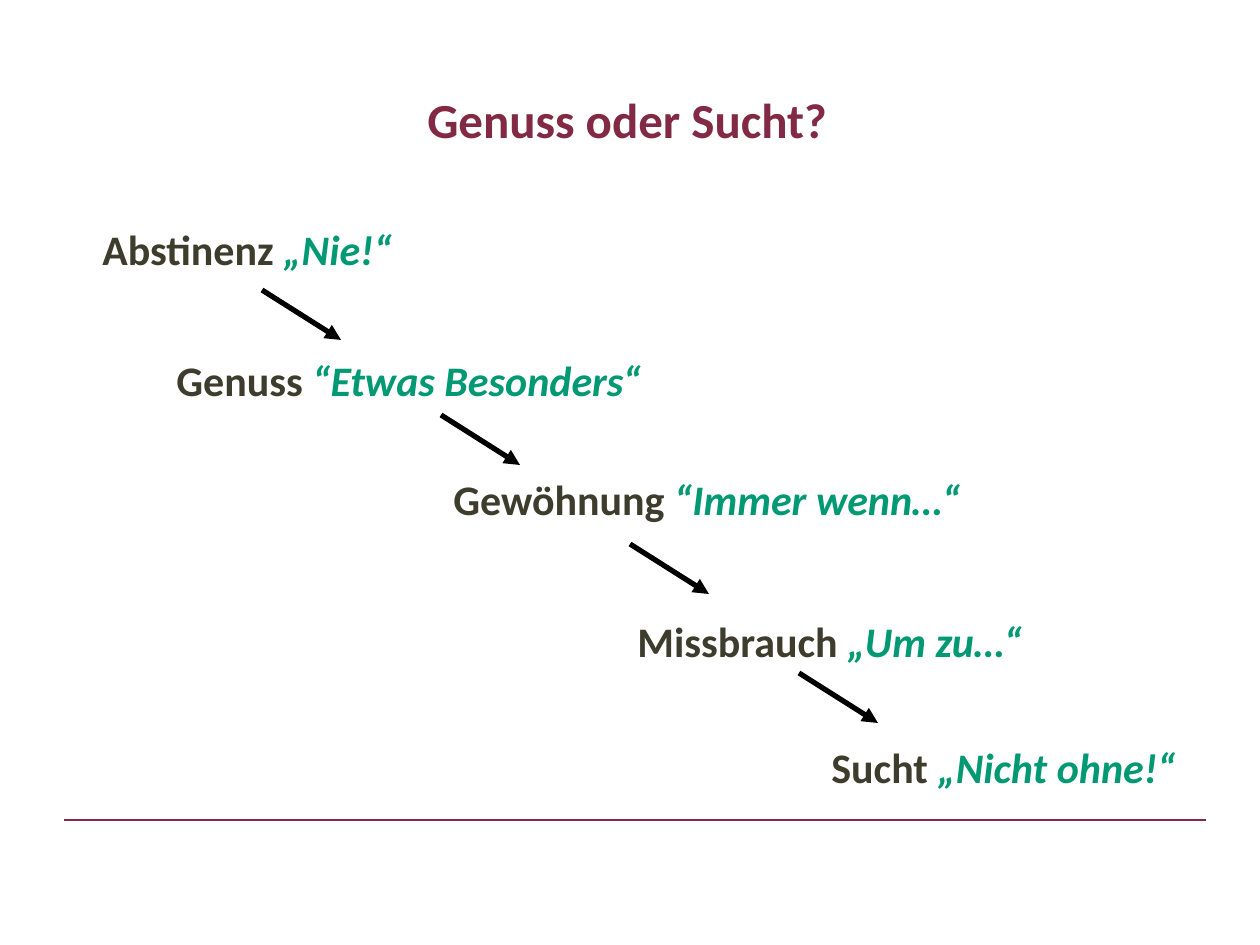
"""Build the slide "Genuss oder Sucht?": five steps joined by arrows."""
import lxml.etree
import pptx
import pptx.dml.color
import pptx.enum.shapes
import pptx.enum.text
import pptx.oxml.ns
import pptx.util

THEME = {
    "font": "Calibri",
    "title": "822A44",
    "step": "3E3D2D",
    "quote": "009973",
    "arrow": "000000",
    "title_size": 28,
    "step_size": 24,
}
EMU_PER_INCH, PX_PER_INCH = 914400, 126
ARROW_W, ARROW_H = 79, 50


def add_text(box, runs, size, align, anchor):
    sp = s.shapes.add_textbox(*[px * EMU_PER_INCH // PX_PER_INCH for px in box])
    tf = sp.text_frame
    tf.word_wrap = True
    tf.vertical_anchor = anchor
    p = tf.paragraphs[0]
    p.alignment = align
    for text, color, italic in runs:
        r = p.add_run()
        r.text = text
        r.font.name = THEME["font"]
        r.font.size = pptx.util.Pt(size)
        r.font.bold = True
        r.font.italic = italic
        r.font.color.rgb = pptx.dml.color.RGBColor.from_string(THEME[color])


def add_line(ends, color, width, arrow):
    points = [px * EMU_PER_INCH // PX_PER_INCH for px in ends]
    sp = s.shapes.add_connector(pptx.enum.shapes.MSO_CONNECTOR.STRAIGHT, *points)
    sp.line.color.rgb = pptx.dml.color.RGBColor.from_string(THEME[color])
    sp.line.width = pptx.util.Pt(width)
    if arrow:
        ln = sp.line._get_or_add_ln()
        lxml.etree.SubElement(ln, pptx.oxml.ns.qn("a:tailEnd"), type="triangle")
    lxml.etree.SubElement(sp._element.spPr, pptx.oxml.ns.qn("a:effectLst"))


prs = pptx.Presentation()
prs.slide_width = pptx.util.Inches(10)
prs.slide_height = pptx.util.Inches(7.5)
s = prs.slides.add_slide(prs.slide_layouts[6])

add_line((64, 820, 1206, 820), "title", 1, False)
add_text(
    (84, 32, 1086, 173),
    [("Genuss oder Sucht?", "title", False)],
    THEME["title_size"],
    pptx.enum.text.PP_ALIGN.CENTER,
    pptx.enum.text.MSO_ANCHOR.MIDDLE,
)

steps = [
    ("Abstinenz ", "„Nie!“", (90, 217, 461, 94)),
    ("Genuss ", "“Etwas Besonders“", (164, 348, 813, 94)),
    ("Gewöhnung ", "“Immer wenn…“", (441, 467, 684, 94)),
    ("Missbrauch ", "„Um zu…“", (625, 609, 625, 94)),
    ("Sucht ", "„Nicht ohne!“", (819, 735, 441, 94)),
]
for step, quote, box in steps:
    add_text(
        box,
        [(step, "step", False), (quote, "quote", True)],
        THEME["step_size"],
        pptx.enum.text.PP_ALIGN.LEFT,
        pptx.enum.text.MSO_ANCHOR.TOP,
    )

for x, y in [(262, 290), (441, 415), (630, 544), (799, 673)]:
    add_line((x, y, x + ARROW_W, y + ARROW_H), "arrow", 3, True)

prs.save("out.pptx")
